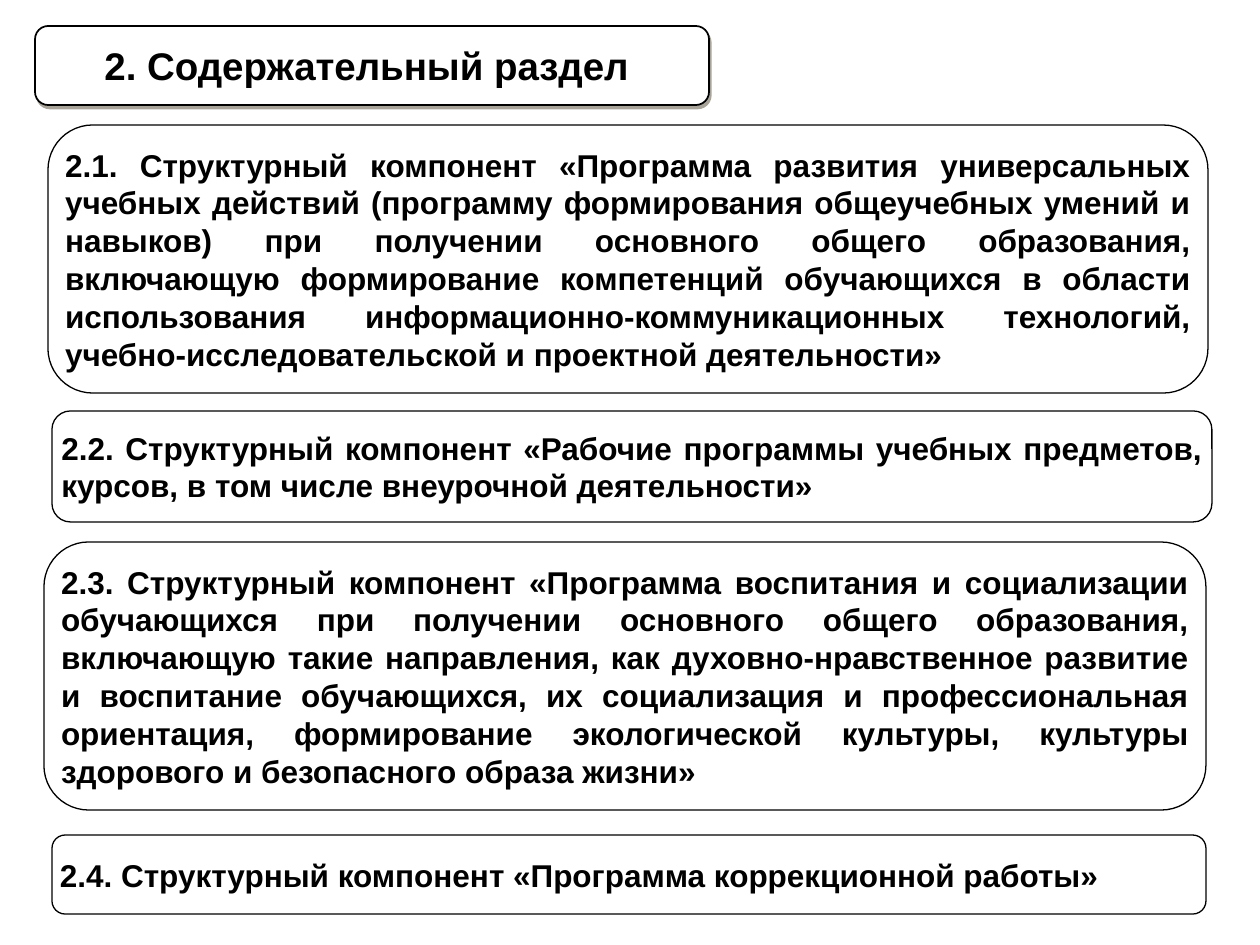
from dataclasses import dataclass

from lxml import etree
from pptx import Presentation
from pptx.dml.color import RGBColor
from pptx.enum.shapes import MSO_SHAPE
from pptx.enum.text import MSO_ANCHOR, MSO_AUTO_SIZE, PP_ALIGN
from pptx.oxml.ns import qn
from pptx.util import Emu, Pt

EMU_PER_PX = 914400 / 126
BLACK = RGBColor(0x00, 0x00, 0x00)
WHITE = RGBColor(0xFF, 0xFF, 0xFF)
SHADOW = RGBColor(0x52, 0x4A, 0x37)
ROUNDED = MSO_SHAPE.ROUNDED_RECTANGLE
MIDDLE = MSO_ANCHOR.MIDDLE
NO_AUTOFIT = MSO_AUTO_SIZE.NONE
CENTER, JUSTIFY = PP_ALIGN.CENTER, PP_ALIGN.JUSTIFY
FONT = "Arial"
INSET = 4


@dataclass
class Card:
    x: int
    y: int
    w: int
    h: int
    text: str


HEADING = Card(35, 26, 674, 79, "2. Содержательный раздел ")
COMPONENTS = [
    Card(48, 125, 1160, 268,
         "2.1. Структурный компонент «Программа развития универсальных учебных "
         "действий (программу формирования общеучебных умений и навыков) при "
         "получении основного общего образования, включающую формирование "
         "компетенций обучающихся в области использования "
         "информационно-коммуникационных технологий, учебно-исследовательской "
         "и проектной деятельности»"),
    Card(52, 411, 1160, 111,
         "2.2. Структурный компонент «Рабочие программы учебных предметов, "
         "курсов, в том числе внеурочной деятельности»"),
    Card(44, 542, 1162, 268,
         "2.3. Структурный компонент «Программа воспитания и социализации "
         "обучающихся при получении основного общего образования, включающую "
         "такие направления, как духовно-нравственное развитие и воспитание "
         "обучающихся, их социализация и профессиональная ориентация, "
         "формирование экологической культуры, культуры здорового и "
         "безопасного образа жизни»"),
    Card(52, 835, 1154, 79,
         "2.4. Структурный компонент «Программа коррекционной работы»"),
]


def px(n: int) -> Emu:
    return Emu(round(n * EMU_PER_PX))


def draw_box(s, card: Card, line_pt: float):
    sp = s.shapes.add_shape(ROUNDED, px(card.x), px(card.y), px(card.w), px(card.h))
    sp.shadow.inherit = False
    sp.fill.solid()
    sp.fill.fore_color.rgb = WHITE
    sp.line.color.rgb = BLACK
    sp.line.width = Pt(line_pt)
    return sp


def write_text(sp, text: str, size: int, align) -> None:
    tf = sp.text_frame
    tf.text = text
    tf.word_wrap = True
    tf.auto_size = NO_AUTOFIT
    tf.vertical_anchor = MIDDLE
    tf.margin_left = tf.margin_right = tf.margin_top = tf.margin_bottom = px(INSET)
    p = tf.paragraphs[0]
    p.alignment = align
    font = p.runs[0].font
    font.name, font.size, font.bold = FONT, Pt(size), True
    font.color.rgb = BLACK


def add_shadow(sp) -> None:
    effects = sp._element.spPr.find(qn("a:effectLst"))
    shadow = etree.SubElement(effects, qn("a:outerShdw"), blurRad="0",
                              dist=str(Pt(2.2)), dir=str(63 * 60000),
                              algn="ctr", rotWithShape="0")
    color = etree.SubElement(shadow, qn("a:srgbClr"), val=str(SHADOW))
    etree.SubElement(color, qn("a:alpha"), val="50000")


def draw_heading(s, card: Card) -> None:
    box = draw_box(s, card, 1)
    add_shadow(box)
    title = s.shapes.title
    title.left, title.top = px(card.x), px(card.y)
    title.width, title.height = px(card.w), px(card.h)
    write_text(title, card.text, 22, CENTER)
    # The frame goes behind the title text
    title._element.addprevious(box._element)


def main() -> None:
    prs = Presentation()
    prs.slide_width, prs.slide_height = px(1260), px(945)
    s = prs.slides.add_slide(prs.slide_layouts[5])

    # Section heading
    draw_heading(s, HEADING)

    # Structural components
    for card in COMPONENTS:
        write_text(draw_box(s, card, 0.75), card.text, 18, JUSTIFY)

    prs.save("out.pptx")


if __name__ == "__main__":
    main()
